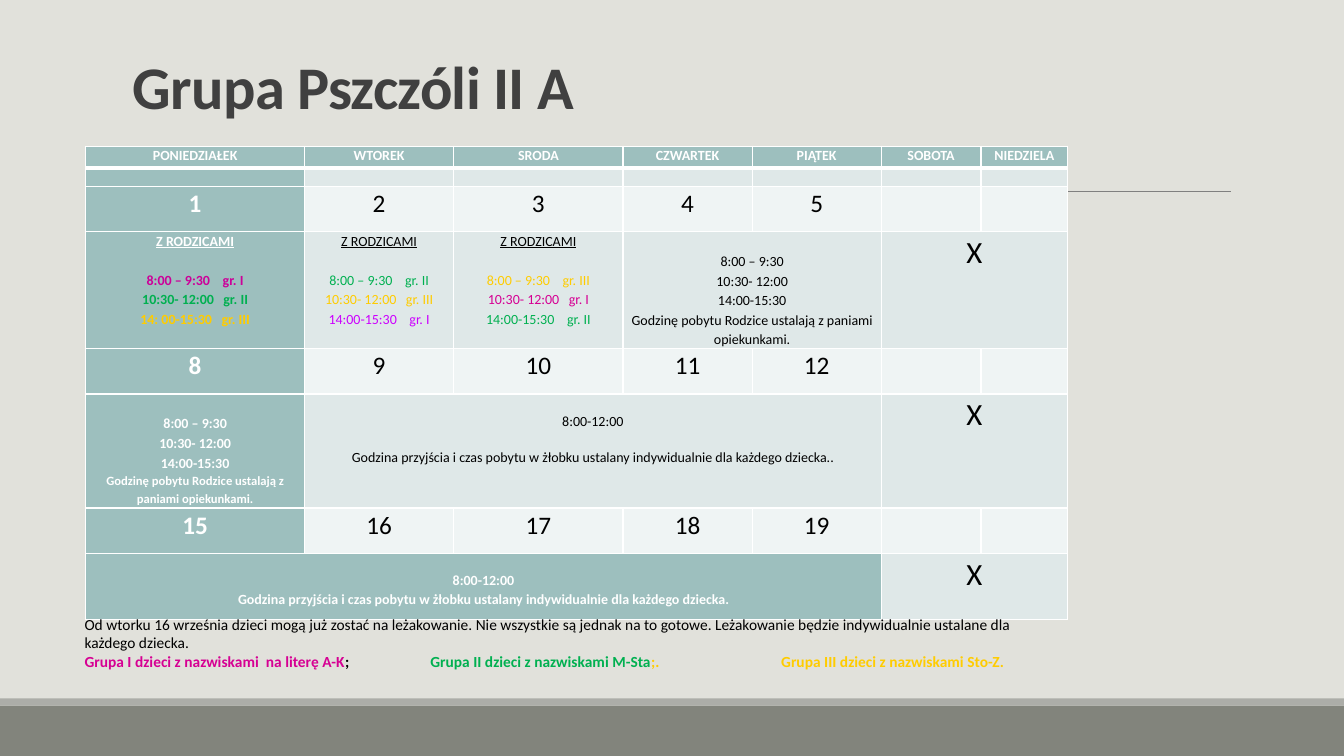
import dataclasses
import typing

import lxml.etree
import pptx
import pptx.dml.color
import pptx.enum.dml
import pptx.enum.shapes
import pptx.enum.text
import pptx.oxml.ns
import pptx.util

Inches = pptx.util.Inches
Pt = pptx.util.Pt
RGBColor = pptx.dml.color.RGBColor
qn = pptx.oxml.ns.qn

FONT = "Calibri"
BACKGROUND = RGBColor(0xE1, 0xE1, 0xDB)
FOOTER = RGBColor(0x82, 0x84, 0x7C)
FOOTER_EDGE = RGBColor(0xAC, 0xAD, 0xA8)
RULE = RGBColor(0x80, 0x80, 0x80)
TITLE = RGBColor(0x40, 0x40, 0x40)
WHITE = RGBColor(0xFF, 0xFF, 0xFF)
BLACK = RGBColor(0x00, 0x00, 0x00)
TEAL = RGBColor(0x9D, 0xBF, 0xBE)
BAND = RGBColor(0xDF, 0xE8, 0xE8)
DAY_BAND = RGBColor(0xEF, 0xF4, 0xF4)
MAGENTA = RGBColor(0xCC, 0x00, 0x99)
PINK = RGBColor(0xD6, 0x00, 0x93)
VIOLET = RGBColor(0xCC, 0x00, 0xFF)
GREEN = RGBColor(0x00, 0xB0, 0x50)
YELLOW = RGBColor(0xFF, 0xCC, 0x00)

COLUMN_WIDTHS = [2.17, 1.48, 1.68, 1.28, 1.28, 0.99, 0.86]
ROW_HEIGHTS = [0.22, 0.18, 0.45, 1.16, 0.45, 1.13, 0.45, 0.66]
WEEKDAYS = ["PONIEDZIAŁEK", "WTOREK", "SRODA", "CZWARTEK", "PIĄTEK", "SOBOTA", "NIEDZIELA"]
FIRST_DAYS = {2: 1, 4: 8, 6: 15}
HOURS = ["8:00 – 9:30", "10:30- 12:00", "14:00-15:30"]
PARENTS_CHOOSE = "Godzinę pobytu Rodzice ustalają z paniami opiekunkami."
INDIVIDUAL = "Godzina przyjścia i czas pobytu w żłobku ustalany indywidualnie dla każdego dziecka."


@dataclasses.dataclass
class Line:
    text: str
    size: float = 10
    color: typing.Optional[RGBColor] = None
    spacing: float = 1.07
    before: float = 0
    underline: bool = False


PARENT_VISITS = [
    [("8:00 – 9:30    gr. I", MAGENTA), ("10:30- 12:00   gr. II", GREEN),
     ("14: 00-15:30   gr. III", YELLOW)],
    [("8:00 – 9:30    gr. II", GREEN), ("10:30- 12:00   gr. III", YELLOW),
     ("14:00-15:30    gr. I", VIOLET)],
    [("8:00 – 9:30    gr. III", YELLOW), ("10:30- 12:00   gr. I", PINK),
     ("14:00-15:30    gr. II", GREEN)],
]


def add_run(paragraph, text, size, color, bold=False, underline=False):
    run = paragraph.add_run()
    run.text = text
    font = run.font
    font.name = FONT
    font.size = Pt(size)
    font.bold = bold
    font.underline = underline
    font.color.rgb = color
    return run


def add_bar(slide, top, height, color):
    bar = slide.shapes.add_shape(
        pptx.enum.shapes.MSO_SHAPE.RECTANGLE, 0, Inches(top), Inches(13.33), Inches(height))
    bar.shadow.inherit = False
    bar.fill.solid()
    bar.fill.fore_color.rgb = color
    bar.line.fill.background()


def add_rule(slide):
    rule = slide.shapes.add_connector(
        pptx.enum.shapes.MSO_CONNECTOR.STRAIGHT,
        Inches(1.31), Inches(1.9), Inches(12.21), Inches(1.9))
    rule.line.color.rgb = RULE
    rule.line.width = Pt(0.5)
    lxml.etree.SubElement(rule._element.spPr, qn("a:effectLst"))


def add_text_frame(slide, left, top, width, height):
    box = slide.shapes.add_textbox(Inches(left), Inches(top), Inches(width), Inches(height))
    box.text_frame.word_wrap = True
    return box.text_frame


def add_title(slide):
    frame = add_text_frame(slide, 1.22, 0.6, 7.19, 0.66)
    frame.vertical_anchor = pptx.enum.text.MSO_ANCHOR.BOTTOM
    paragraph = frame.paragraphs[0]
    paragraph.line_spacing = 0.85
    run = add_run(paragraph, "Grupa Pszczóli II A", 43.2, TITLE, bold=True)
    run.font._element.set("spc", "-50")


def set_borders(cell, row):
    properties = cell._tc.get_or_add_tcPr()
    widths = {"L": 1, "R": 1, "T": 3 if row == 1 else 1, "B": 3 if row == 0 else 1}
    for side, width in widths.items():
        border = lxml.etree.SubElement(properties, qn(f"a:ln{side}"), w=str(Pt(width)))
        fill = lxml.etree.SubElement(border, qn("a:solidFill"))
        lxml.etree.SubElement(fill, qn("a:srgbClr"), val=str(WHITE))


def style_cell(cell, row, column):
    set_borders(cell, row)
    cell.fill.solid()
    if row == 0 or column == 0:
        cell.fill.fore_color.rgb = TEAL
    else:
        cell.fill.fore_color.rgb = BAND if row % 2 else DAY_BAND
    cell.margin_left = cell.margin_right = Inches(0.07)
    cell.margin_top = cell.margin_bottom = 0
    cell.text_frame.paragraphs[0]._p.get_or_add_endParaRPr().set("sz", "1000")


def fill_cell(table, row, column, lines, span=1, top=0):
    cell = table.cell(row, column)
    if span > 1:
        cell.merge(table.cell(row, column + span - 1))
    cell.margin_top = Inches(top)
    heading = row == 0 or column == 0
    for index, line in enumerate(lines):
        frame = cell.text_frame
        paragraph = frame.add_paragraph() if index else frame.paragraphs[0]
        paragraph.alignment = pptx.enum.text.PP_ALIGN.CENTER
        paragraph.line_spacing = line.spacing
        paragraph.space_before = Pt(line.before)
        color = line.color or (WHITE if heading else BLACK)
        add_run(paragraph, line.text, line.size, color, heading, line.underline)


def visit_lines(visits):
    lines = [Line(text, color=color, spacing=1.15) for text, color in visits]
    lines[0].before = 14
    return [Line("Z RODZICAMI", underline=True)] + lines


def hour_lines(note_size):
    return [Line(hour, spacing=1.15) for hour in HOURS] + [
        Line(PARENTS_CHOOSE, note_size, spacing=1.15)]


def add_schedule(slide):
    table = slide.shapes.add_table(
        len(ROW_HEIGHTS), len(COLUMN_WIDTHS), Inches(0.85), Inches(1.45),
        Inches(sum(COLUMN_WIDTHS)), Inches(sum(ROW_HEIGHTS))).table
    for column, width in enumerate(COLUMN_WIDTHS):
        table.columns[column].width = Inches(width)
    for row, height in enumerate(ROW_HEIGHTS):
        table.rows[row].height = Inches(height)
        for column in range(len(COLUMN_WIDTHS)):
            style_cell(table.cell(row, column), row, column)

    for column, weekday in enumerate(WEEKDAYS):
        fill_cell(table, 0, column, [Line(weekday)])
    for row, first_day in FIRST_DAYS.items():
        for column in range(5):
            fill_cell(table, row, column, [Line(str(first_day + column), 18)])
        fill_cell(table, row + 1, 5, [Line("X", 22)], span=2)

    for column, visits in enumerate(PARENT_VISITS):
        fill_cell(table, 3, column, visit_lines(visits))
    fill_cell(table, 3, 3, hour_lines(10), span=2, top=0.19)
    fill_cell(table, 5, 0, hour_lines(9), top=0.19)
    fill_cell(table, 5, 1, [Line("8:00-12:00"), Line(INDIVIDUAL + ".", before=13)],
              span=4, top=0.18)
    fill_cell(table, 7, 0, [Line("8:00-12:00"), Line(INDIVIDUAL)], span=5, top=0.18)


def add_legend(slide):
    frame = add_text_frame(slide, 0.74, 6.05, 9.86, 0.89)
    add_run(frame.paragraphs[0],
            "Od wtorku 16 września dzieci mogą już zostać na leżakowanie. Nie wszystkie są "
            "jednak na to gotowe. Leżakowanie będzie indywidualnie ustalane dla każdego dziecka.",
            11, BLACK)
    groups = frame.add_paragraph()
    tab_list = lxml.etree.SubElement(groups._p.get_or_add_pPr(), qn("a:tabLst"))
    for position in (3.43, 6.91):
        lxml.etree.SubElement(tab_list, qn("a:tab"), pos=str(Inches(position)), algn="l")
    for text, color in [
        ("Grupa I dzieci z nazwiskami  na literę A-K", PINK),
        (";\t", BLACK),
        ("Grupa II dzieci z nazwiskami M-Sta", GREEN),
        (";.\tGrupa III dzieci z nazwiskami Sto-Z.", YELLOW),
    ]:
        add_run(groups, text, 11, color, bold=True)


def main():
    presentation = pptx.Presentation()
    presentation.slide_width = Inches(13.33)
    presentation.slide_height = Inches(7.5)
    slide = presentation.slides.add_slide(presentation.slide_layouts[6])
    slide.background.fill.solid()
    slide.background.fill.fore_color.rgb = BACKGROUND
    add_bar(slide, 7, 0.5, FOOTER)
    add_bar(slide, 6.93, 0.07, FOOTER_EDGE)
    add_rule(slide)
    add_title(slide)
    add_schedule(slide)
    add_legend(slide)
    presentation.save("out.pptx")


if __name__ == "__main__":
    main()
